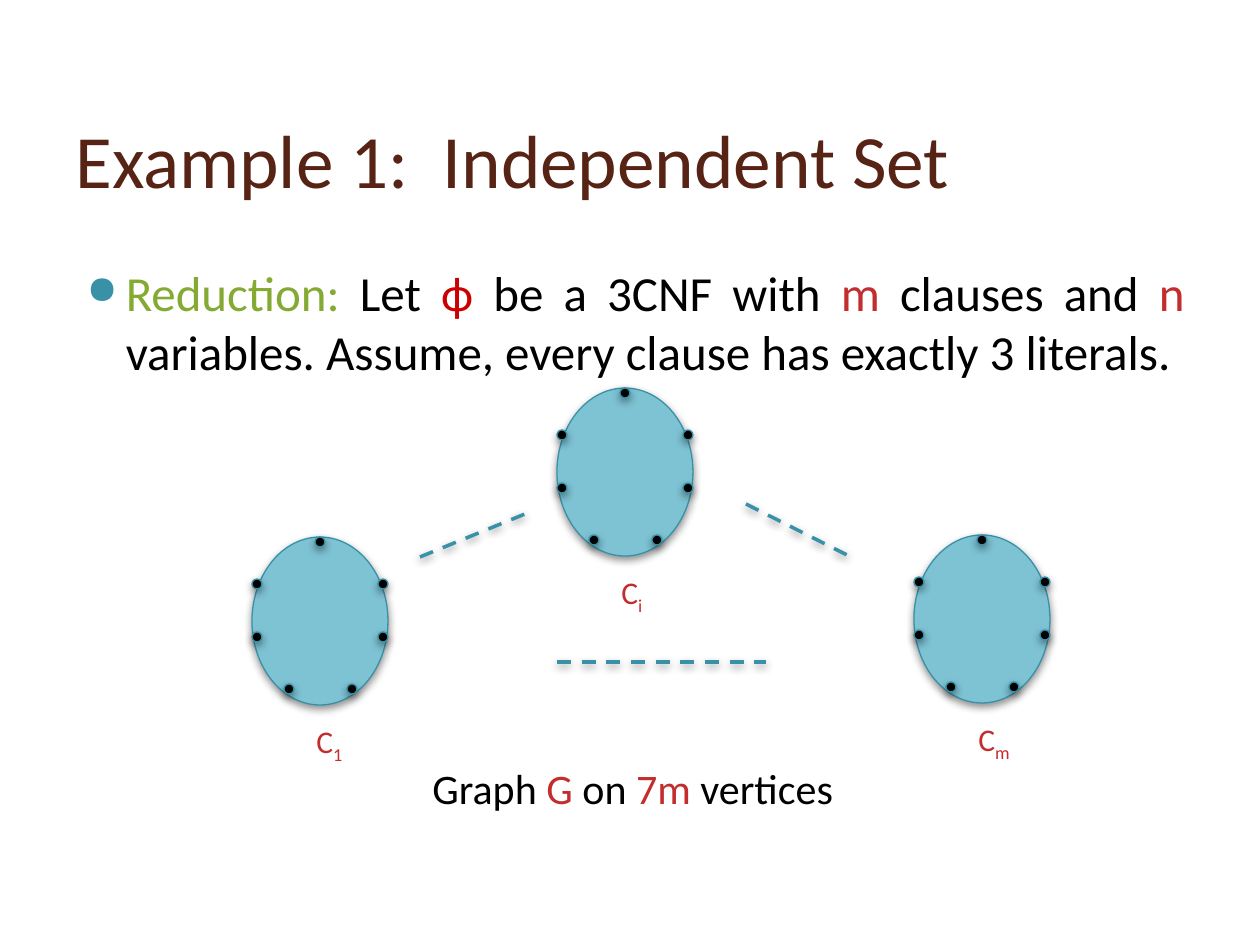
from lxml import etree
from pptx import Presentation
from pptx import util as u
from pptx.dml.color import RGBColor
from pptx.enum import dml, shapes, text
from pptx.oxml import parse_xml
from pptx.oxml.ns import nsdecls, qn

EMU_PER_PX = 914400 / 126
TEAL, RED, BLACK = "3891A7", "C32D2E", "000000"
SHADOW = (
    f'<a:effectLst {nsdecls("a")}>'
    '<a:outerShdw blurRad="63500" dist="25400" dir="5400000" rotWithShape="0">'
    '<a:srgbClr val="000000"><a:alpha val="43000"/></a:srgbClr>'
    "</a:outerShdw></a:effectLst>"
)

deck = Presentation()
deck.slide_width, deck.slide_height = u.Inches(10), u.Inches(7.5)
slide = deck.slides.add_slide(deck.slide_layouts[6])


def write(box, runs, size, **paragraph_format):
    frame = slide.shapes.add_textbox(*[int(v * EMU_PER_PX) for v in box]).text_frame
    frame.word_wrap = True
    paragraph = frame.paragraphs[0]
    for name, value in paragraph_format.items():
        setattr(paragraph, name, value)
    for words, color in runs:
        run = paragraph.add_run()
        run.text = words
        for name, value in {"name": "Calibri", "size": u.Pt(size)}.items():
            setattr(run.font, name, value)
        run.font.color.rgb = RGBColor.from_string(color)
    return frame


def outline(figure, width):
    figure.line.color.rgb = RGBColor.from_string(TEAL)
    figure.line.width = u.Pt(width)
    properties = figure._element.spPr
    for effects in properties.findall(qn("a:effectLst")):
        properties.remove(effects)
    properties.append(parse_xml(SHADOW))


title = write((63, 97, 1197, 123), [("Example 1:  Independent Set", "572314")], 43)
title.vertical_anchor = text.MSO_ANCHOR.MIDDLE

reduction = write(
    (63, 256, 1134, 646),
    [
        ("Reduction: ", "84AA33"),
        ("Let ", BLACK),
        ("ϕ ", "CC0000"),
        ("be a 3CNF with ", BLACK),
        ("m", RED),
        (" clauses and ", BLACK),
        ("n", RED),
        (" variables. Assume, every clause has exactly 3 literals.", BLACK),
    ],
    28,
    alignment=text.PP_ALIGN.JUSTIFY,
    space_before=u.Pt(6),
)
bullet = reduction.paragraphs[0]._p.get_or_add_pPr()
bullet.set("marL", str(u.Inches(0.4)))
bullet.set("indent", str(u.Inches(-0.31)))
bullet_color = etree.SubElement(bullet, qn("a:buClr"))
etree.SubElement(bullet_color, qn("a:srgbClr"), val=TEAL)
etree.SubElement(bullet, qn("a:buSzPct"), val="80000")
etree.SubElement(bullet, qn("a:buChar"), char="●")

clause_size, vertex_size = (136, 168), (10, 10)
vertices = [(63, 0), (0, 42), (126, 42), (126, 95), (0, 95), (32, 147), (95, 147)]
clauses = [("i", 557, 388, 53), ("1", 252, 537, 63), ("m", 914, 535, 73)]
for index, left, top, label_width in clauses:
    ovals = [((0, 0), clause_size, "7EC3D4")]
    ovals += [(vertex, vertex_size, BLACK) for vertex in vertices]
    for (dx, dy), size, color in ovals:
        box = (left + dx, top + dy, *size)
        oval = slide.shapes.add_shape(
            shapes.MSO_SHAPE.OVAL, *[int(v * EMU_PER_PX) for v in box]
        )
        oval.fill.solid()
        oval.fill.fore_color.rgb = RGBColor.from_string(color)
        outline(oval, 0.75)
    label = write(
        (left + 52, top + 179, label_width, 50),
        [("C", RED), (index, RED)],
        18,
        alignment=text.PP_ALIGN.JUSTIFY,
    )
    label.paragraphs[0].runs[1].font._element.set("baseline", "-25000")

for ends in [(746, 504, 851, 557), (557, 662, 766, 662), (420, 557, 525, 514)]:
    link = slide.shapes.add_connector(
        shapes.MSO_CONNECTOR.STRAIGHT, *[int(v * EMU_PER_PX) for v in ends]
    )
    outline(link, 2)
    link.line.dash_style = dml.MSO_LINE.DASH

write(
    (420, 756, 451, 63),
    [("Graph ", BLACK), ("G", RED), (" on ", BLACK), ("7m", RED), (" vertices", BLACK)],
    24,
)

deck.save("out.pptx")
